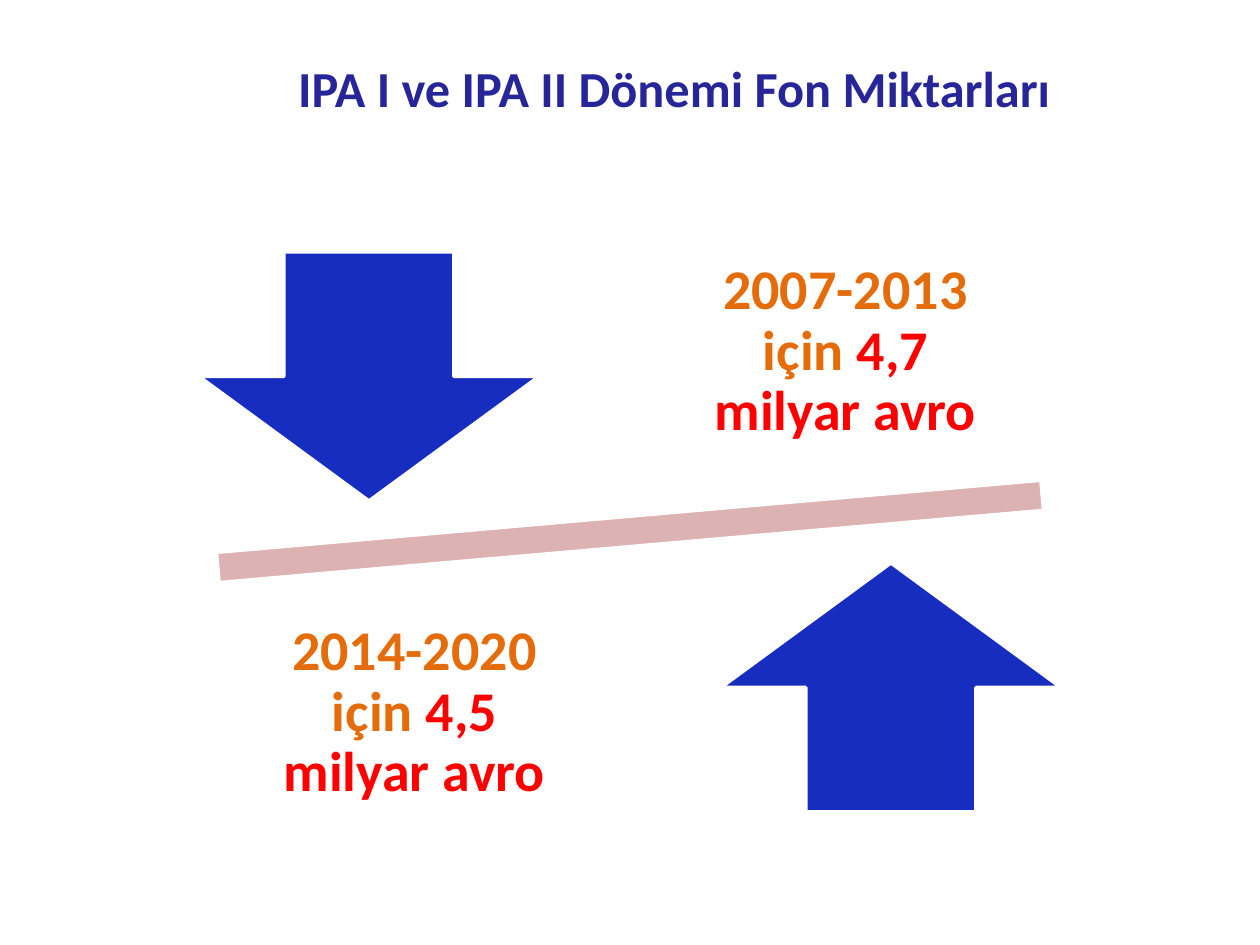
from dataclasses import dataclass

import pptx
import pptx.dml.color
import pptx.enum.shapes
import pptx.enum.text
import pptx.util

SCALE = 914400 / 126
FONT = "Calibri"
COLORS = {
    "title": "262699",
    "arrow": "172DBF",
    "bar": "DCB3B2",
    "line": "FFFFFF",
    "period": "E46C0A",
    "amount": "FF0000",
}
SHAPE = pptx.enum.shapes.MSO_SHAPE


@dataclass
class Figure:
    kind: SHAPE
    x: int
    y: int
    w: int
    h: int
    color: str
    rotation: int = 0


@dataclass
class Fund:
    x: int
    y: int
    period: str
    amount: str


FIGURES = [
    Figure(SHAPE.MATH_MINUS, 67, 467, 1126, 129, "bar", 355),
    Figure(SHAPE.DOWN_ARROW, 199, 252, 340, 249, "arrow"),
    Figure(SHAPE.UP_ARROW, 721, 563, 340, 249, "arrow"),
]
FUNDS = [
    Fund(664, 221, "2007-2013 için ", "4,7 milyar avro"),
    Fund(233, 582, "2014-2020 için ", "4,5 milyar avro"),
]


def px(n: int) -> int:
    return round(n * SCALE)


def rgb(name: str) -> pptx.dml.color.RGBColor:
    return pptx.dml.color.RGBColor.from_string(COLORS[name])


def add_run(p, text: str, *, size: float, color: str, bold: bool = True) -> None:
    r = p.add_run()
    r.text = text
    r.font.name = FONT
    r.font.size = pptx.util.Pt(size)
    r.font.bold = bold
    r.font.color.rgb = rgb(color)


def center(tf):
    tf.word_wrap = True
    tf.auto_size = pptx.enum.text.MSO_AUTO_SIZE.NONE
    tf.vertical_anchor = pptx.enum.text.MSO_ANCHOR.MIDDLE
    p = tf.paragraphs[0]
    p.alignment = pptx.enum.text.PP_ALIGN.CENTER
    return p


def draw_title(s, text: str) -> None:
    sp = s.shapes.title
    sp.left, sp.top, sp.width, sp.height = px(273), px(33), px(803), px(108)
    add_run(center(sp.text_frame), text, size=28.8, color="title")


def draw_figure(s, f: Figure) -> None:
    sp = s.shapes.add_shape(f.kind, px(f.x), px(f.y), px(f.w), px(f.h))
    sp.rotation = f.rotation
    sp.shadow.inherit = False
    sp.fill.solid()
    sp.fill.fore_color.rgb = rgb(f.color)
    sp.line.color.rgb = rgb("line")
    sp.line.width = pptx.util.Pt(2)


def draw_fund(s, f: Fund) -> None:
    tf = s.shapes.add_textbox(px(f.x), px(f.y), px(363), px(262)).text_frame
    tf.margin_left = tf.margin_right = tf.margin_top = tf.margin_bottom = px(32)
    p = center(tf)
    p.line_spacing = 0.9
    add_run(p, f.period, size=32, color="period")
    add_run(p, f.amount, size=32, color="amount")


def main() -> None:
    prs = pptx.Presentation()
    prs.slide_width, prs.slide_height = px(1260), px(945)
    s = prs.slides.add_slide(prs.slide_layouts.get_by_name("Title Only"))
    draw_title(s, "IPA I ve IPA II Dönemi Fon Miktarları")
    for figure in FIGURES:
        draw_figure(s, figure)
    for fund in FUNDS:
        draw_fund(s, fund)
    prs.save("out.pptx")


if __name__ == "__main__":
    main()
